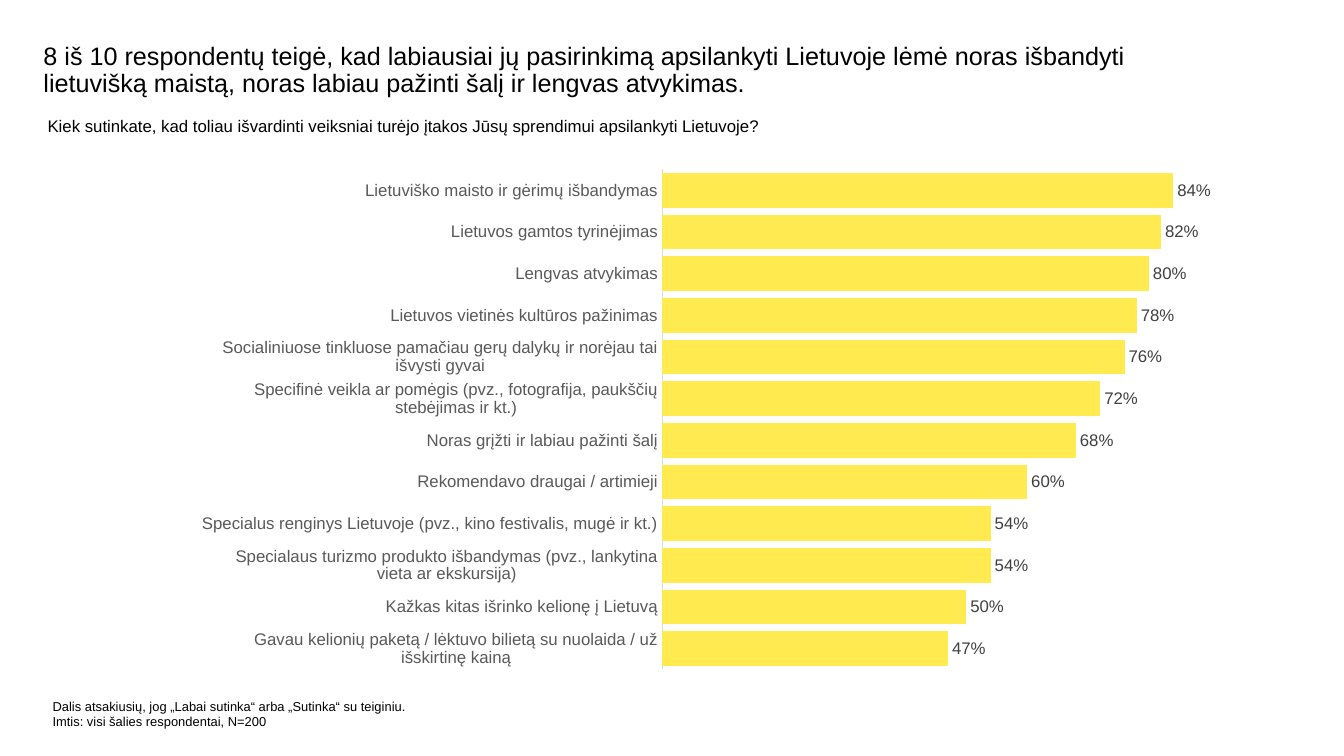
import pptx
import pptx.chart.data
import pptx.dml.color
import pptx.enum.chart
import pptx.enum.text
import pptx.oxml
import pptx.util

Pt = pptx.util.Pt
FONT = "Arial"
COLOURS = {"text": "000000", "bar": "FFEB50", "category": "595959",
           "value": "404040", "axis": "D9D9D9"}

TITLE = ("8 iš 10 respondentų teigė, kad labiausiai jų pasirinkimą apsilankyti Lietuvoje "
         "lėmė noras išbandyti lietuvišką maistą, noras labiau pažinti šalį ir lengvas atvykimas.")
QUESTION = ("Kiek sutinkate, kad toliau išvardinti veiksniai turėjo įtakos Jūsų sprendimui "
            "apsilankyti Lietuvoje?")
FOOTNOTES = ["Dalis atsakiusių, jog „Labai sutinka“ arba „Sutinka“ su teiginiu.",
             "Imtis: visi šalies respondentai, N=200"]
FACTORS = [
    ("Lietuviško maisto ir gėrimų išbandymas", 0.84),
    ("Lietuvos gamtos tyrinėjimas", 0.82),
    ("Lengvas atvykimas", 0.80),
    ("Lietuvos vietinės kultūros pažinimas", 0.78),
    ("Socialiniuose tinkluose pamačiau gerų dalykų ir norėjau tai išvysti gyvai", 0.76),
    ("Specifinė veikla ar pomėgis (pvz., fotografija, paukščių stebėjimas ir kt.)", 0.72),
    ("Noras grįžti ir labiau pažinti šalį", 0.68),
    ("Rekomendavo draugai / artimieji", 0.60),
    ("Specialus renginys Lietuvoje (pvz., kino festivalis, mugė ir kt.)", 0.54),
    ("Specialaus turizmo produkto išbandymas (pvz., lankytina vieta ar ekskursija)", 0.54),
    ("Kažkas kitas išrinko kelionę į Lietuvą", 0.50),
    ("Gavau kelionių paketą / lėktuvo bilietą su nuolaida / už išskirtinę kainą", 0.47),
]


def colour(name):
    return pptx.dml.color.RGBColor.from_string(COLOURS[name])


def style_font(font, size, name="text"):
    font.name, font.size, font.bold = FONT, Pt(size), False
    font.color.rgb = colour(name)


def write_text(shape, lines, size, line_spacing=1.0,
               anchor=pptx.enum.text.MSO_ANCHOR.TOP):
    frame = shape.text_frame
    frame.word_wrap = True
    frame.auto_size = pptx.enum.text.MSO_AUTO_SIZE.NONE
    frame.vertical_anchor = anchor
    frame.margin_left = frame.margin_top = frame.margin_right = frame.margin_bottom = 0
    for index, line in enumerate(lines):
        para = frame.add_paragraph() if index else frame.paragraphs[0]
        para.alignment = pptx.enum.text.PP_ALIGN.LEFT
        para.line_spacing = line_spacing
        span = para.add_run()
        span.text = line
        style_font(span.font, size)


def place_title(page, left, top, width, height):
    title = page.shapes.title
    title.left, title.top, title.width, title.height = map(Pt, (left, top, width, height))
    write_text(title, [TITLE], 18, line_spacing=0.9,
               anchor=pptx.enum.text.MSO_ANCHOR.MIDDLE)


def place_note(page, left, top, width, height, lines, size):
    box = page.shapes.add_textbox(*map(Pt, (left, top, width, height)))
    write_text(box, lines, size)


def set_plot_area(chart, x, y, w, h):
    """Fix the inner plot area, as fractions of the chart."""
    sizes = "".join(f'<c:{key} val="{value}"/>'
                    for key, value in (("x", x), ("y", y), ("w", w), ("h", h)))
    layout = pptx.oxml.parse_xml(
        '<c:layout xmlns:c="http://schemas.openxmlformats.org/drawingml/2006/chart">'
        '<c:manualLayout><c:layoutTarget val="inner"/><c:xMode val="edge"/>'
        f'<c:yMode val="edge"/>{sizes}</c:manualLayout></c:layout>')
    plot_area = chart.plots[0]._element.getparent()
    for old in plot_area.xpath("c:layout"):
        plot_area.remove(old)
    plot_area.insert(0, layout)


def place_factor_chart(page, left, top, width, height):
    data = pptx.chart.data.CategoryChartData(number_format="0%")
    data.categories = [label for label, share in FACTORS]
    data.add_series("Series 1", [share for label, share in FACTORS])
    chart = page.shapes.add_chart(pptx.enum.chart.XL_CHART_TYPE.BAR_CLUSTERED,
                                  *map(Pt, (left, top, width, height)), data).chart
    style_font(chart.font, 10)
    chart.has_title = chart.has_legend = False
    set_plot_area(chart, 0.457, 0.008, 0.543, 0.94)

    categories = chart.category_axis
    categories.reverse_order = True
    categories.has_major_gridlines = False
    categories.major_tick_mark = pptx.enum.chart.XL_TICK_MARK.NONE
    categories.format.line.color.rgb = colour("axis")
    categories.format.line.width = Pt(0.75)
    style_font(categories.tick_labels.font, 12, "category")

    values = chart.value_axis
    values.minimum_scale, values.maximum_scale = 0, 0.9
    values.has_major_gridlines = False
    values.visible = False

    plot = chart.plots[0]
    plot.gap_width = 20
    plot.vary_by_categories = False
    bars = plot.series[0]
    bars.format.fill.solid()
    bars.format.fill.fore_color.rgb = colour("bar")
    labels = bars.data_labels
    labels.show_value = True
    labels.number_format, labels.number_format_is_linked = "0%", False
    labels.position = pptx.enum.chart.XL_LABEL_POSITION.OUTSIDE_END
    style_font(labels.font, 12, "value")


def main():
    deck = pptx.Presentation()
    deck.slide_width, deck.slide_height = Pt(960), Pt(540)
    page = deck.slides.add_slide(deck.slide_layouts.get_by_name("Title Only"))
    place_title(page, 31, 29, 810, 43)
    place_note(page, 34, 83, 856, 44, [QUESTION], 12)
    place_note(page, 37.5, 499, 253.5, 29, FOOTNOTES, 9.2)
    place_factor_chart(page, 143.5, 118, 721.5, 380)
    deck.save("out.pptx")


if __name__ == "__main__":
    main()
